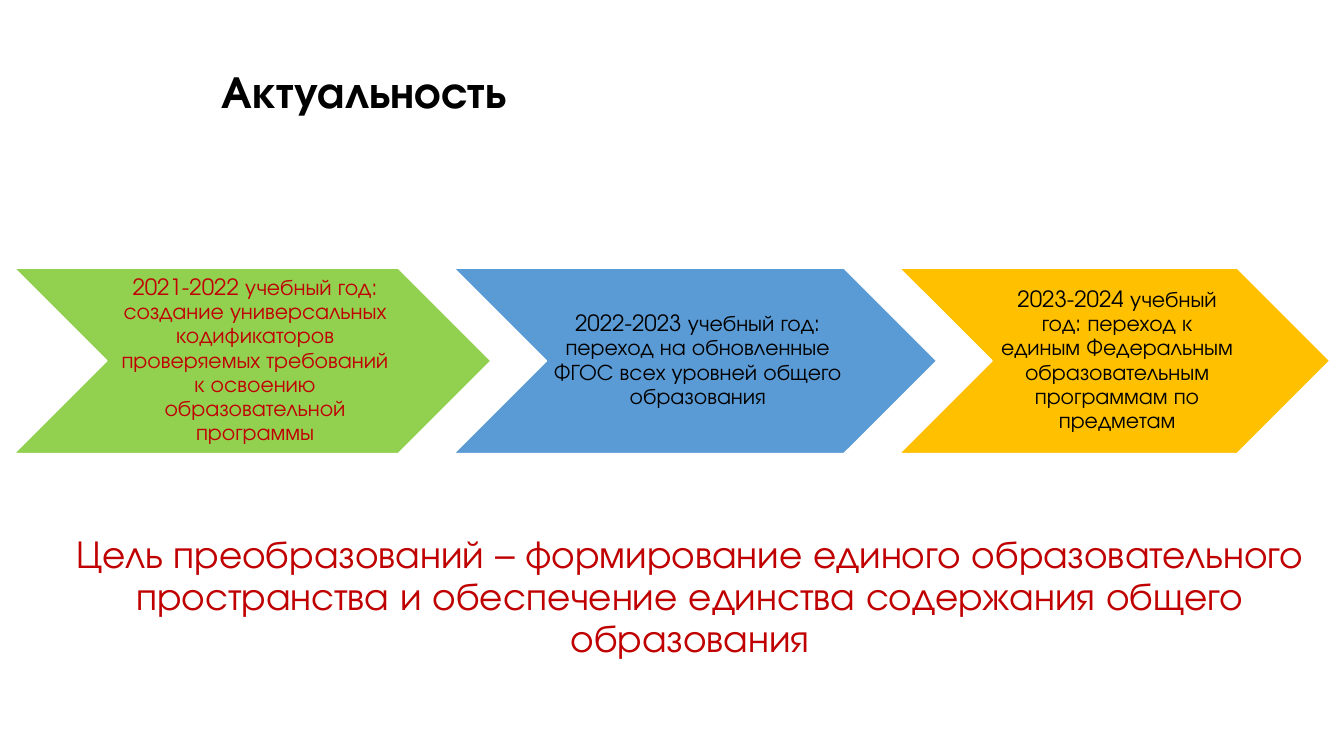
from typing import NamedTuple

from lxml import etree
from pptx import Presentation
from pptx.dml.color import RGBColor
from pptx.enum.shapes import MSO_SHAPE
from pptx.enum.text import MSO_ANCHOR, MSO_AUTO_SIZE, PP_ALIGN
from pptx.oxml.ns import qn
from pptx.util import Emu, Pt

CHEVRON = MSO_SHAPE.CHEVRON
TOP, MIDDLE = MSO_ANCHOR.TOP, MSO_ANCHOR.MIDDLE
LEFT, CENTER = PP_ALIGN.LEFT, PP_ALIGN.CENTER
NO_AUTOFIT = MSO_AUTO_SIZE.NONE

EMU_PER_PX = 9144  # 100 px to the inch
FONT = "TeX Gyre Adventor"
BLACK, RED, WHITE = "000000", "C00000", "FFFFFF"
STAGE_TOP, STAGE_HEIGHT = 266, 184


class Stage(NamedTuple):
    left: int
    width: int
    fill: str
    color: str
    text: str


STAGES = [
    Stage(14, 473, "92D050", RED,
          "2021-2022 учебный год: создание универсальных кодификаторов "
          "проверяемых требований к освоению образовательной программы"),
    Stage(450, 479, "5B9BD5", BLACK,
          "2022-2023 учебный год: переход на обновленные ФГОС всех уровней "
          "общего образования"),
    Stage(892, 427, "FFC000", BLACK,
          "2023-2024 учебный год: переход к единым Федеральным "
          "образовательным программам по предметам"),
]


def px(length: int) -> Emu:
    return Emu(length * EMU_PER_PX)


def rgb(color: str) -> RGBColor:
    return RGBColor.from_string(color)


def place(shape, left: int, top: int, width: int, height: int) -> None:
    shape.left, shape.top = px(left), px(top)
    shape.width, shape.height = px(width), px(height)


def write(shape, text: str, size: float, color: str, align, anchor,
          bold: bool = False) -> None:
    frame = shape.text_frame
    frame.word_wrap = True
    frame.auto_size = NO_AUTOFIT
    frame.vertical_anchor = anchor
    para = frame.paragraphs[0]
    para.text = text
    properties = para._p.get_or_add_pPr()
    properties.set("marL", "0")
    properties.set("indent", "0")
    etree.SubElement(properties, qn("a:buNone"))
    para.alignment = align
    para.line_spacing = 0.9
    para.space_before = Pt(0)
    para.font.name = FONT
    para.font.size = Pt(size)
    para.font.bold = bold
    para.font.color.rgb = rgb(color)


def add_stage(slide, stage: Stage) -> None:
    chevron = slide.shapes.add_shape(
        CHEVRON, px(stage.left), px(STAGE_TOP), px(stage.width), px(STAGE_HEIGHT))
    chevron.shadow.inherit = False
    chevron.fill.solid()
    chevron.fill.fore_color.rgb = rgb(stage.fill)
    chevron.line.color.rgb = rgb(WHITE)
    chevron.line.width = Pt(1)

    # The label spans the chevron between its notch and its point.
    box = slide.shapes.add_textbox(
        px(stage.left + STAGE_HEIGHT // 2), px(STAGE_TOP),
        px(stage.width - STAGE_HEIGHT), px(STAGE_HEIGHT))
    frame = box.text_frame
    frame.margin_left = px(7)
    frame.margin_top = frame.margin_right = frame.margin_bottom = px(2)
    write(box, stage.text, 16, stage.color, CENTER, MIDDLE)


def main() -> None:
    deck = Presentation()
    deck.slide_width, deck.slide_height = px(1333), px(750)
    slide = deck.slides.add_slide(deck.slide_layouts[1])

    title = slide.shapes.title
    place(title, 210, 66, 1065, 54)
    write(title, "Актуальность", 32.4, BLACK, LEFT, MIDDLE, bold=True)

    goal = slide.placeholders[1]
    place(goal, 52, 525, 1265, 102)
    write(goal,
          "Цель преобразований – формирование единого образовательного "
          "пространства и обеспечение единства содержания общего образования",
          28, RED, CENTER, TOP)

    for stage in STAGES:
        add_stage(slide, stage)

    deck.save("out.pptx")


if __name__ == "__main__":
    main()
